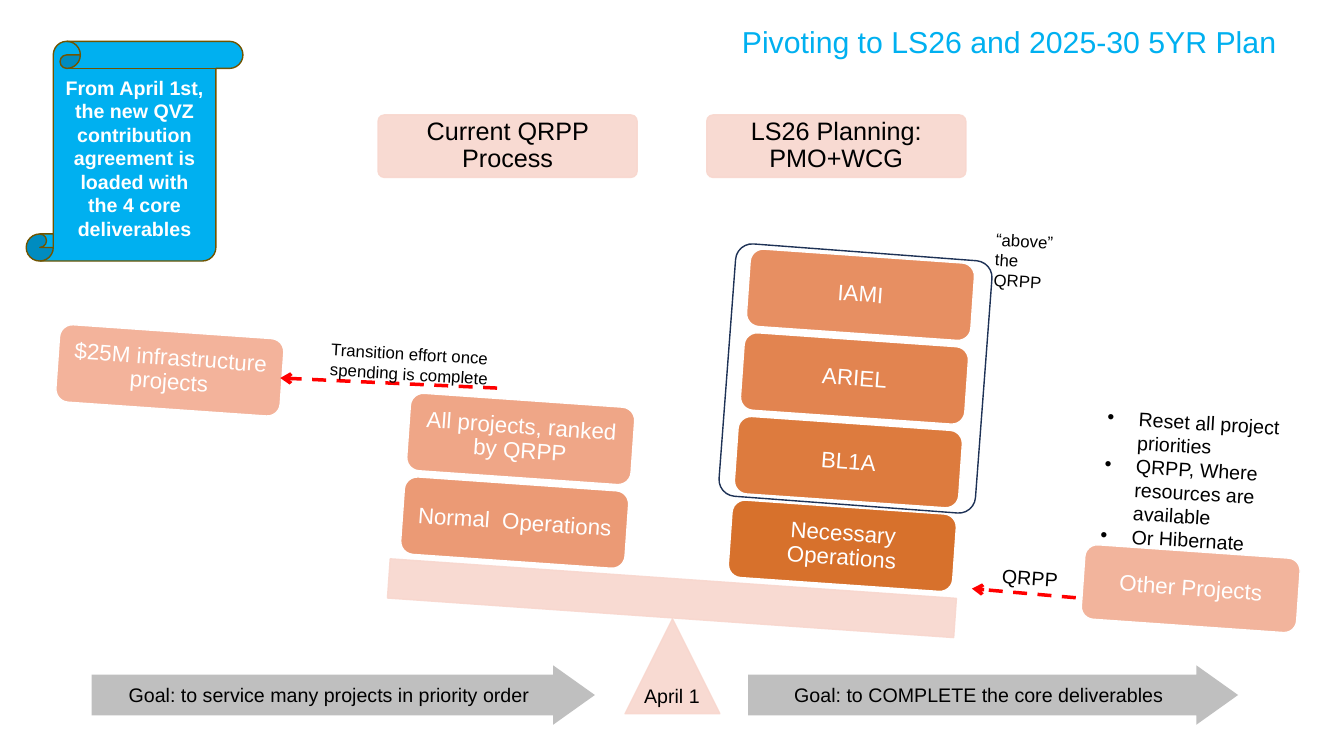
from lxml.etree import SubElement
from pptx import Presentation
from pptx.dml.color import RGBColor
from pptx.enum.dml import MSO_LINE
from pptx.enum.shapes import MSO_CONNECTOR, MSO_SHAPE as Preset
from pptx.enum.text import MSO_ANCHOR as Anchor, PP_ALIGN as Align
from pptx.oxml.ns import qn
from pptx.util import Inches, Pt

WIDTH, HEIGHT = 13.33, 7.5
TILT = 4
BLOCK_WIDTH, BLOCK_HEIGHT = 2.23, 0.77
STEP_X, STEP_Y = 0.06, 0.83
PALE, RED = "F8D7CE", "FF0000"


def color(value):
    """Turn a hex string into a colour."""
    return RGBColor.from_string(value)


def write(shape, lines, size, ink="000000", align=Align.LEFT, anchor=Anchor.TOP,
          bold=False, spacing=None, inset=None, bullet=False):
    """Fill a shape with one paragraph per line."""
    frame = shape.text_frame
    frame.word_wrap = True
    frame.vertical_anchor = anchor
    if inset is not None:
        frame.margin_left = frame.margin_right = Inches(inset)
        frame.margin_top = frame.margin_bottom = Inches(inset)
    for index, line in enumerate(lines):
        paragraph = frame.add_paragraph() if index else frame.paragraphs[0]
        paragraph.text = line
        paragraph.alignment = align
        if bullet:
            properties = paragraph._p.get_or_add_pPr()
            properties.set("marL", str(Inches(0.31)))
            properties.set("indent", str(-Inches(0.31)))
            SubElement(properties, qn("a:buFont"), typeface="Arial")
            SubElement(properties, qn("a:buChar"), char="•")
        if spacing:
            paragraph.line_spacing = spacing
        font = paragraph.font
        font.name, font.size, font.bold = "Arial", Pt(size), bold
        font.color.rgb = color(ink)


def add_label(slide, box, lines, size, rotation=0, **style):
    """Add a text box, tilted if asked."""
    label = slide.shapes.add_textbox(*map(Inches, box))
    label.rotation = rotation
    write(label, lines, size, **style)


def add_figure(slide, preset, box, fill=None, line=None, rotation=0, adjust=(), opacity=None):
    """Add a flat preset shape; without a fill it stays hollow."""
    shape = slide.shapes.add_shape(preset, *map(Inches, box))
    shape.shadow.inherit = False
    shape.rotation = rotation
    for index, value in enumerate(adjust):
        shape.adjustments[index] = value
    if line:
        shape.line.color.rgb = color(line)
        shape.line.width = Pt(1)
    else:
        shape.line.fill.background()
    if fill:
        shape.fill.solid()
        shape.fill.fore_color.rgb = color(fill)
    else:
        shape.fill.background()
    if opacity:
        for tint in shape._element.spPr.iter(qn("a:srgbClr")):
            SubElement(tint, qn("a:alpha"), val=str(opacity * 1000))
    return shape


def add_dashed_arrow(slide, start, end):
    """Add a red dashed arrow from start to end."""
    arrow = slide.shapes.add_connector(MSO_CONNECTOR.STRAIGHT, *map(Inches, start + end))
    arrow.line.color.rgb = color(RED)
    arrow.line.width = Pt(2.5)
    arrow.line.dash_style = MSO_LINE.DASH
    SubElement(arrow.line._get_or_add_ln(), qn("a:tailEnd"), type="arrow")
    SubElement(arrow._element.spPr, qn("a:effectLst"))


def add_block(slide, box, text, fill):
    """Add a tilted rounded block with a white caption."""
    block = add_figure(slide, Preset.ROUNDED_RECTANGLE, box, fill, "FFFFFF", TILT)
    write(block, [text], 16, "FFFFFF", Align.CENTER, Anchor.MIDDLE, spacing=0.9, inset=0.07)


def add_stack(slide, left, top, blocks):
    """Pile blocks upwards from the lowest one, along the tilt."""
    for level, (text, fill) in enumerate(blocks):
        box = (left + level * STEP_X, top - level * STEP_Y, BLOCK_WIDTH, BLOCK_HEIGHT)
        add_block(slide, box, text, fill)


def add_headings(slide, left, top, pitch):
    """Add the heading card above each side of the scale."""
    for column, text in enumerate(("Current QRPP Process", "LS26 Planning: PMO+WCG")):
        card = add_figure(slide, Preset.ROUNDED_RECTANGLE, (left + column * pitch, top, 2.57, 0.62),
                          PALE, PALE, adjust=[0.1], opacity=90)
        write(card, [text], 18, align=Align.CENTER, anchor=Anchor.MIDDLE, spacing=0.9, inset=0.07)


def add_scale(slide, left, top):
    """Add the tilted beam, its pivot and both stacks."""
    add_figure(slide, Preset.ISOSCELES_TRIANGLE, (left + 2.35, top + 0.4, 0.94, 0.94),
               PALE, PALE, opacity=90)
    add_label(slide, (left + 2.44, top + 1, 0.93, 0.34), ["April 1"], 14)
    add_figure(slide, Preset.RECTANGLE, (left, top, 5.63, 0.39), PALE, PALE, TILT, opacity=90)
    add_stack(slide, left + 3.39, top - 0.71, [
        ("Necessary Operations", "D7712C"), ("BL1A", "DD7B3E"),
        ("ARIEL", "E28450"), ("IAMI", "E78F62")])
    add_stack(slide, left + 0.14, top - 0.94, [
        ("Normal  Operations", "EB9A75"), ("All projects, ranked by QRPP", "EFA687")])
    add_figure(slide, Preset.ROUNDED_RECTANGLE, (left + 3.36, top - 3.24, 2.55, 2.51),
               line="1E3256", rotation=4.3, adjust=[0.066])
    add_label(slide, (left + 5.92, top - 3.5, 0.77, 0.71), ["“above” the QRPP"], 12, 3.4)


def add_infrastructure(slide, left, top):
    """Add the infrastructure block and the arrow leading to it."""
    add_block(slide, (left, top, BLOCK_WIDTH, BLOCK_HEIGHT), "$25M infrastructure projects", "F3B39B")
    add_dashed_arrow(slide, (left + 4.36, top + 0.56), (left + 2.21, top + 0.46))
    add_label(slide, (left + 2.61, top + 0.08, 2.09, 0.5),
              ["Transition effort once spending is complete"], 12, 3.4)


def add_other_projects(slide, left, top):
    """Add the remaining projects, their rules and the arrow to the scale."""
    add_block(slide, (left, top, 2.14, 0.74), "Other Projects", "F2B49C")
    add_dashed_arrow(slide, (left - 0.07, top + 0.46), (left - 1.1, top + 0.37))
    add_label(slide, (left - 0.9, top + 0.13, 2.01, 0.34), ["QRPP"], 14, 3.5)
    rules = ["Reset all project priorities", "QRPP, Where resources are available", "Or Hibernate"]
    add_label(slide, (left + 0.11, top - 1.44, 2.17, 1.51), rules, 14, 3.4, bullet=True)


def add_goal(slide, box, text):
    """Add a grey goal arrow."""
    goal = add_figure(slide, Preset.RIGHT_ARROW, box, "BFBFBF", adjust=[0.682, 0.702])
    write(goal, [text], 14, align=Align.CENTER, anchor=Anchor.MIDDLE)


def add_scroll(slide, box, text):
    """Add the blue announcement scroll."""
    scroll = add_figure(slide, Preset.VERTICAL_SCROLL, box, "00B0F0", "705400")
    write(scroll, [text], 14, "FFFFFF", Align.CENTER, Anchor.MIDDLE, bold=True)


def main():
    """Build and save the slide."""
    presentation = Presentation()
    presentation.slide_width, presentation.slide_height = Inches(WIDTH), Inches(HEIGHT)
    slide = presentation.slides.add_slide(presentation.slide_layouts[6])
    add_label(slide, (2.29, 0.24, 10.47, 0.38), ["Pivoting to LS26 and 2025-30 5YR Plan"], 21.6,
              ink="00B0F0", align=Align.RIGHT, anchor=Anchor.MIDDLE, spacing=0.9)
    add_headings(slide, 3.75, 1.14, 3.26)
    add_scale(slide, 3.85, 5.74)
    add_infrastructure(slide, 0.57, 3.29)
    add_other_projects(slide, 10.74, 5.47)
    add_goal(slide, (0.91, 6.6, 4.99, 0.59), "Goal: to service many projects in priority order")
    add_goal(slide, (7.42, 6.6, 4.86, 0.59), "Goal: to COMPLETE the core deliverables")
    add_scroll(slide, (0.26, 0.41, 2.15, 2.18),
               "From April 1st, the new QVZ contribution agreement is loaded with the 4 core deliverables")
    presentation.save("out.pptx")


if __name__ == "__main__":
    main()
